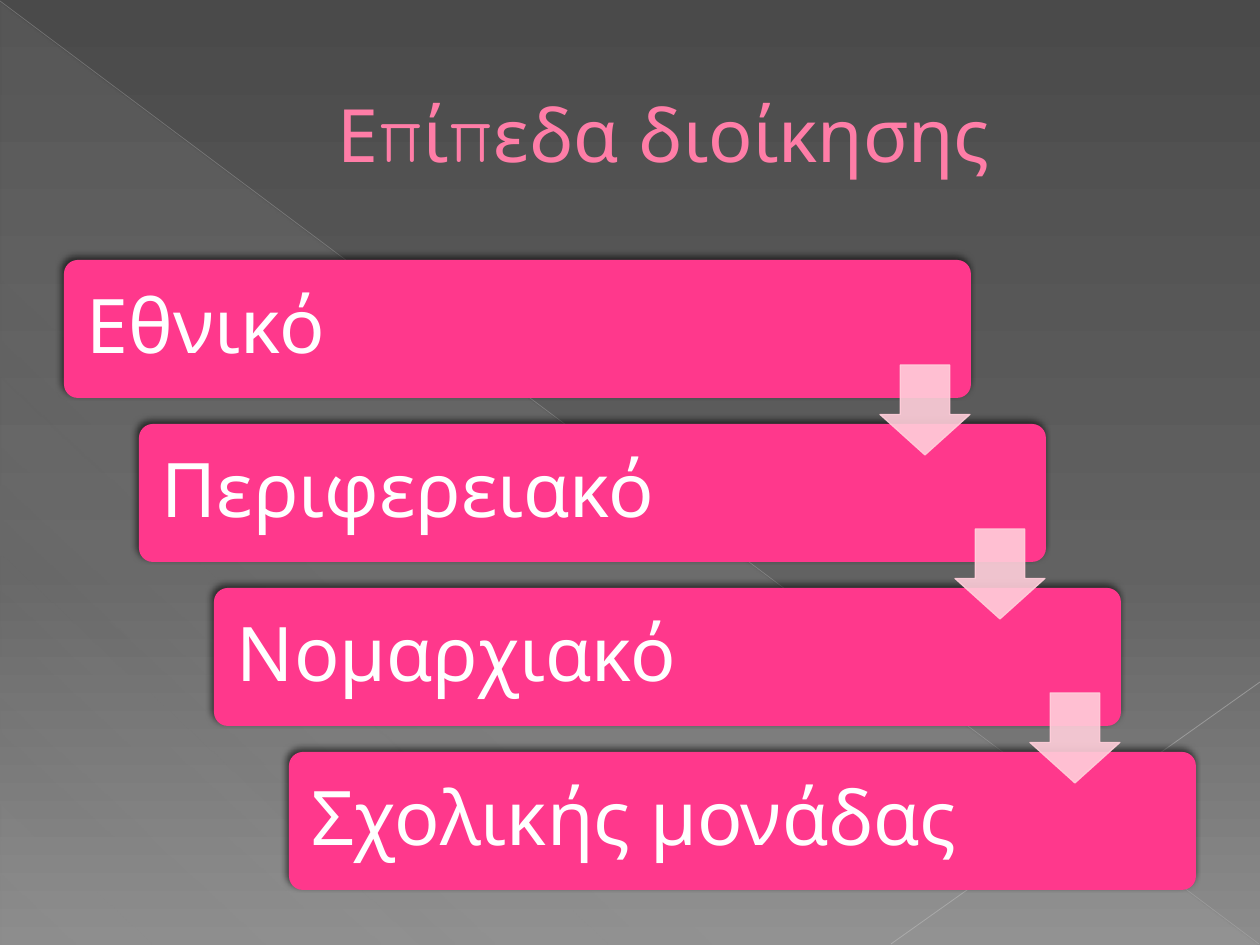
"""Build the slide on the levels of administration as a descending staircase."""
from lxml import etree
from pptx import Presentation
from pptx.dml.color import RGBColor
from pptx.enum.shapes import MSO_CONNECTOR, MSO_SHAPE
from pptx.enum.text import MSO_ANCHOR, PP_ALIGN
from pptx.oxml import parse_xml
from pptx.oxml.ns import nsdecls, qn
from pptx.util import Emu, Pt

LINE = MSO_CONNECTOR.STRAIGHT
TRIANGLE = MSO_SHAPE.RIGHT_TRIANGLE
ROUNDED = MSO_SHAPE.ROUNDED_RECTANGLE
ARROW = MSO_SHAPE.DOWN_ARROW
MIDDLE = MSO_ANCHOR.MIDDLE
LEFT, CENTER = PP_ALIGN.LEFT, PP_ALIGN.CENTER

TITLE = "Επίπεδα διοίκησης"
LEVELS = ["Εθνικό", "Περιφερειακό", "Νομαρχιακό", "Σχολικής μονάδας"]
COLORS = {"title": "FF7DA7", "step": "FF388C", "arrow": "FFCEDA",
          "text": "FFFFFF", "shadow": "000000"}
BACKGROUND = [(0, "4A4A4A", 100), (60, "626262", 100), (100, "8C8C8C", 100)]
SHEEN = [(0, "D2D2D2", 10), (70, "D2D2D2", 8), (100, "D2D2D2", 1)]
RAYS = [((0, 1, 1259, 944), "BFBFBF", 0.39, 35),
        ((1260, 682, 891, 944), "C6C6C6", 0.47, 45)]

PAGE_SIZE = (1260, 945)
TITLE_AREA = (63, 37, 1134, 193)
TITLE_INDENT = 67
STEP_START, STEP_SIZE, STEP_SHIFT = (64, 260), (907, 138), (75, 164)
ARROW_START, ARROW_SIZE = (880, 365), (90, 90)
STEP_MARGIN = 19


def px(value):
    return Emu(round(value * 914400 / 126))


def color(hex_value):
    return RGBColor.from_string(hex_value)


def set_alpha(fill, percent):
    for tag in fill.iter(qn("a:srgbClr")):
        etree.SubElement(tag, qn("a:alpha")).set("val", str(percent * 1000))


def set_gradient(properties, stops, angle):
    marks = "".join(
        f'<a:gs pos="{position * 1000}"><a:srgbClr val="{shade}">'
        f'<a:alpha val="{alpha * 1000}"/></a:srgbClr></a:gs>'
        for position, shade, alpha in stops)
    gradient = parse_xml(
        f'<a:gradFill {nsdecls("a")} rotWithShape="1"><a:gsLst>{marks}</a:gsLst>'
        f'<a:lin ang="{angle * 60000}" scaled="0"/></a:gradFill>')
    properties.replace(properties.find(qn("a:solidFill")), gradient)


def add_shape(page, kind, area, shade):
    shape = page.shapes.add_shape(kind, *map(px, area))
    shape.shadow.inherit = False
    shape.fill.solid()
    shape.fill.fore_color.rgb = color(shade)
    shape.line.fill.background()
    return shape


def write(box, text, size, shade, align, margin):
    frame = box.text_frame
    frame.word_wrap = True
    frame.vertical_anchor = MIDDLE
    frame.margin_left = frame.margin_right = px(margin)
    para = frame.paragraphs[0]
    para.alignment = align
    span = para.add_run()
    span.text = text
    for name, value in {"name": "Quicksand", "size": Pt(size)}.items():
        setattr(span.font, name, value)
    span.font.color.rgb = color(shade)
    return para


def add_backdrop(page):
    page.background.fill.solid()
    set_gradient(next(page.element.iter(qn("p:bgPr"))), BACKGROUND, 90)
    triangle = add_shape(page, TRIANGLE, (1, 3, 1257, 942), SHEEN[0][1])
    set_gradient(triangle.element.spPr, SHEEN, 133)
    for ends, shade, width, alpha in RAYS:
        ray = page.shapes.add_connector(LINE, *map(px, ends))
        ray.line.color.rgb = color(shade)
        ray.line.width = Pt(width)
        properties = ray.element.spPr
        set_alpha(properties, alpha)
        etree.SubElement(properties, qn("a:effectLst"))


def add_step(page, index, text):
    corner = [start + index * shift for start, shift in zip(STEP_START, STEP_SHIFT)]
    step = add_shape(page, ROUNDED, (*corner, *STEP_SIZE), COLORS["step"])
    step.adjustments[0] = 0.1
    effects = step.element.spPr.find(qn("a:effectLst"))
    effects.append(parse_xml(
        f'<a:outerShdw {nsdecls("a")} blurRad="{Pt(4)}" dist="{Pt(3)}" '
        f'dir="{245 * 60000}" rotWithShape="0"><a:srgbClr val="{COLORS["shadow"]}">'
        '<a:alpha val="60000"/></a:srgbClr></a:outerShdw>'))
    para = write(step, text, 43, COLORS["text"], LEFT, STEP_MARGIN)
    para.line_spacing = 0.9


def add_arrow(page, index):
    corner = [start + index * shift for start, shift in zip(ARROW_START, STEP_SHIFT)]
    arrow = add_shape(page, ARROW, (*corner, *ARROW_SIZE), COLORS["arrow"])
    arrow.adjustments[0], arrow.adjustments[1] = 0.45, 0.55
    arrow.adjustments[0], arrow.adjustments[1] = 0.55, 0.45
    arrow.line.color.rgb = color(COLORS["arrow"])
    arrow.line.width = Pt(0.75)
    set_alpha(arrow.element.spPr, 90)


def main():
    deck = Presentation()
    deck.slide_width, deck.slide_height = map(px, PAGE_SIZE)
    page = deck.slides.add_slide(deck.slide_layouts[6])
    add_backdrop(page)
    title = page.shapes.add_textbox(*map(px, TITLE_AREA))
    para = write(title, TITLE, 42, COLORS["title"], CENTER, 13)
    para._p.get_or_add_pPr().set("marL", str(px(TITLE_INDENT)))
    for index, text in enumerate(LEVELS):
        add_step(page, index, text)
    for index in range(len(LEVELS) - 1):
        add_arrow(page, index)
    deck.save("out.pptx")


if __name__ == "__main__":
    main()
